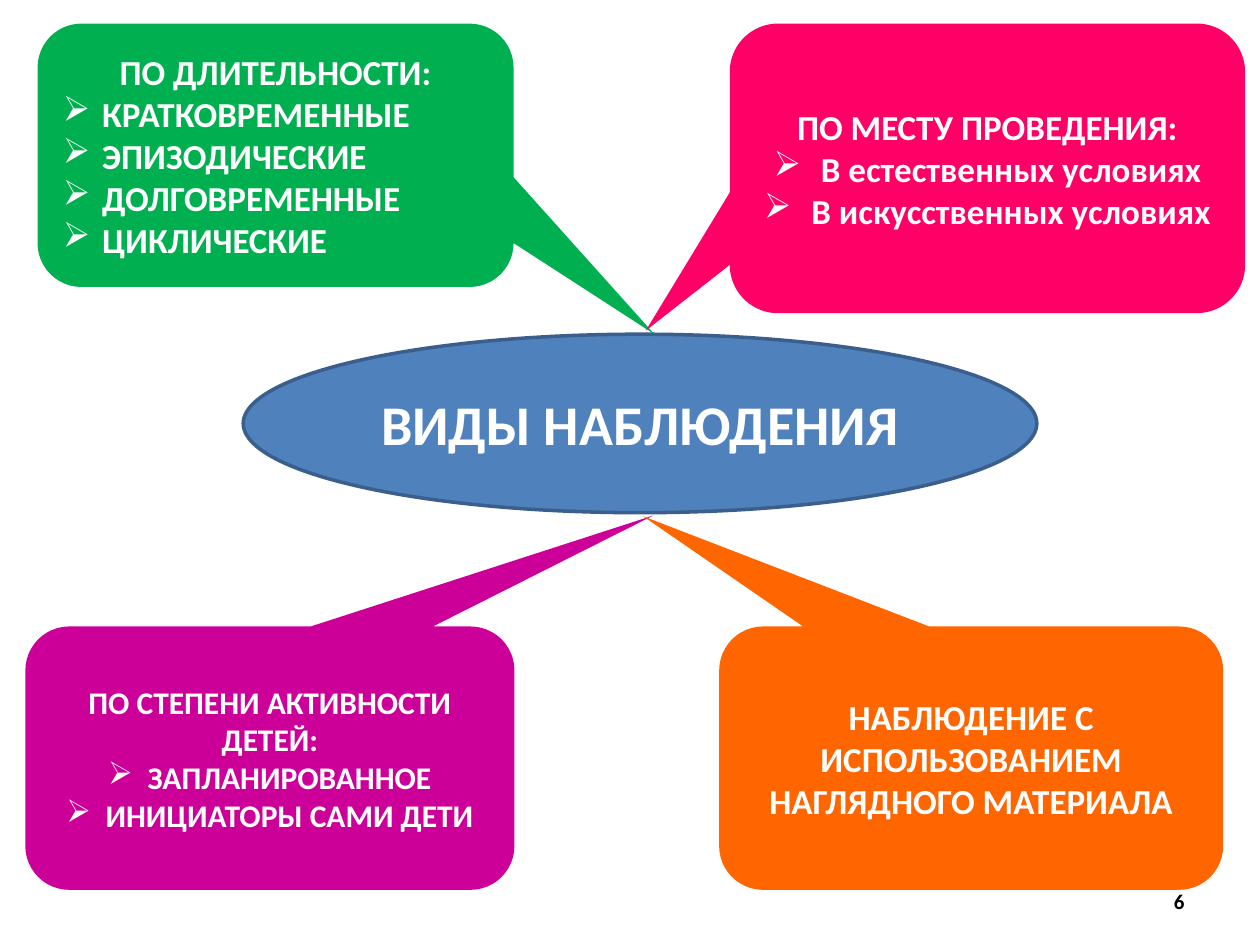
from lxml.etree import SubElement
from pptx import Presentation
from pptx.dml.color import RGBColor
from pptx.enum.shapes import MSO_SHAPE as Shape
from pptx.enum.text import MSO_ANCHOR as Anchor, PP_ALIGN as Align
from pptx.oxml.ns import qn
from pptx.util import Pt


def color(value):
    """Turn a hex string into a colour."""
    return RGBColor.from_string(value)


class SlideBuilder:
    """Holds the text style and the current slide."""

    font = "Calibri"
    light = "FFFFFF"
    dark = "000000"
    bullet = "➢"

    def __init__(self, slide):
        """Start working on a slide."""
        self.slide = slide

    def add_text(self, paragraph, text, size, text_color, align):
        """Add one bold run to a paragraph."""
        paragraph.alignment = align
        run = paragraph.add_run()
        run.text = text
        run.font.name = self.font
        run.font.size = Pt(size)
        run.font.bold = True
        run.font.color.rgb = color(text_color)

    def add_bullet(self, paragraph, indent):
        """Give a paragraph an arrow bullet with a hanging indent."""
        properties = paragraph._p.get_or_add_pPr()
        properties.set("marL", str(Pt(indent)))
        properties.set("indent", str(-Pt(indent)))
        SubElement(properties, qn("a:buChar")).set("char", self.bullet)

    def block(self, kind, box, fill):
        """Add a filled shape without outline or shadow."""
        shape = self.slide.shapes.add_shape(kind, *map(Pt, box))
        shape.shadow.inherit = False
        shape.fill.solid()
        shape.fill.fore_color.rgb = color(fill)
        shape.line.fill.background()
        shape.text_frame.word_wrap = True
        shape.text_frame.vertical_anchor = Anchor.MIDDLE
        return shape

    def ellipse(self, box, text, fill, line, size):
        """Add the central outlined ellipse."""
        shape = self.block(Shape.OVAL, box, fill)
        shape.line.color.rgb = color(line)
        shape.line.width = Pt(2)
        self.add_text(shape.text_frame.paragraphs[0], text, size, self.light, Align.CENTER)

    def callout(self, box, tip, fill, heading, items=(), size=20, indent=22.5, align=Align.CENTER):
        """Add a callout pointing at tip, with a heading and bulleted items."""
        left, top, width, height = box
        shape = self.block(Shape.ROUNDED_RECTANGULAR_CALLOUT, box, fill)
        shape.adjustments[0] = (tip[0] - left) / width - 0.5
        shape.adjustments[1] = (tip[1] - top) / height - 0.5
        frame = shape.text_frame
        self.add_text(frame.paragraphs[0], heading, size, self.light, Align.CENTER)
        for item in items:
            paragraph = frame.add_paragraph()
            self.add_text(paragraph, item, size, self.light, align)
            self.add_bullet(paragraph, indent)

    def page_number(self, box, text):
        """Add the page number."""
        frame = self.slide.shapes.add_textbox(*map(Pt, box)).text_frame
        frame.word_wrap = True
        frame.vertical_anchor = Anchor.MIDDLE
        self.add_text(frame.paragraphs[0], text, 12, self.dark, Align.RIGHT)


def main():
    """Build and save the slide."""
    presentation = Presentation()
    presentation.slide_width, presentation.slide_height = Pt(720), Pt(540)
    builder = SlideBuilder(presentation.slides.add_slide(presentation.slide_layouts[6]))

    builder.ellipse((139, 191, 453.5, 102), "ВИДЫ НАБЛЮДЕНИЯ", "4F81BD", "3A5F8C", 32)
    builder.callout(
        (21.5, 13.5, 272, 150.5), (374, 191), "00B050", "ПО ДЛИТЕЛЬНОСТИ:",
        ["КРАТКОВРЕМЕННЫЕ", "ЭПИЗОДИЧЕСКИЕ", "ДОЛГОВРЕМЕННЫЕ", "ЦИКЛИЧЕСКИЕ"],
        align=Align.LEFT)
    builder.callout(
        (417, 13.5, 294.5, 165.5), (369, 189), "FF0066", "ПО МЕСТУ ПРОВЕДЕНИЯ:",
        ["В естественных условиях", "В искусственных условиях"], indent=27)
    builder.callout(
        (14.5, 358, 279.5, 150.5), (373.5, 294.5), "CC0099", "ПО СТЕПЕНИ АКТИВНОСТИ ДЕТЕЙ:",
        ["ЗАПЛАНИРОВАННОЕ", "ИНИЦИАТОРЫ САМИ ДЕТИ"], size=18)
    builder.callout(
        (411, 358, 288, 150.5), (367.5, 295), "FF6600",
        "НАБЛЮДЕНИЕ С ИСПОЛЬЗОВАНИЕМ НАГЛЯДНОГО МАТЕРИАЛА")
    builder.page_number((516, 500.5, 168, 29), "6")

    presentation.save("out.pptx")


if __name__ == "__main__":
    main()
